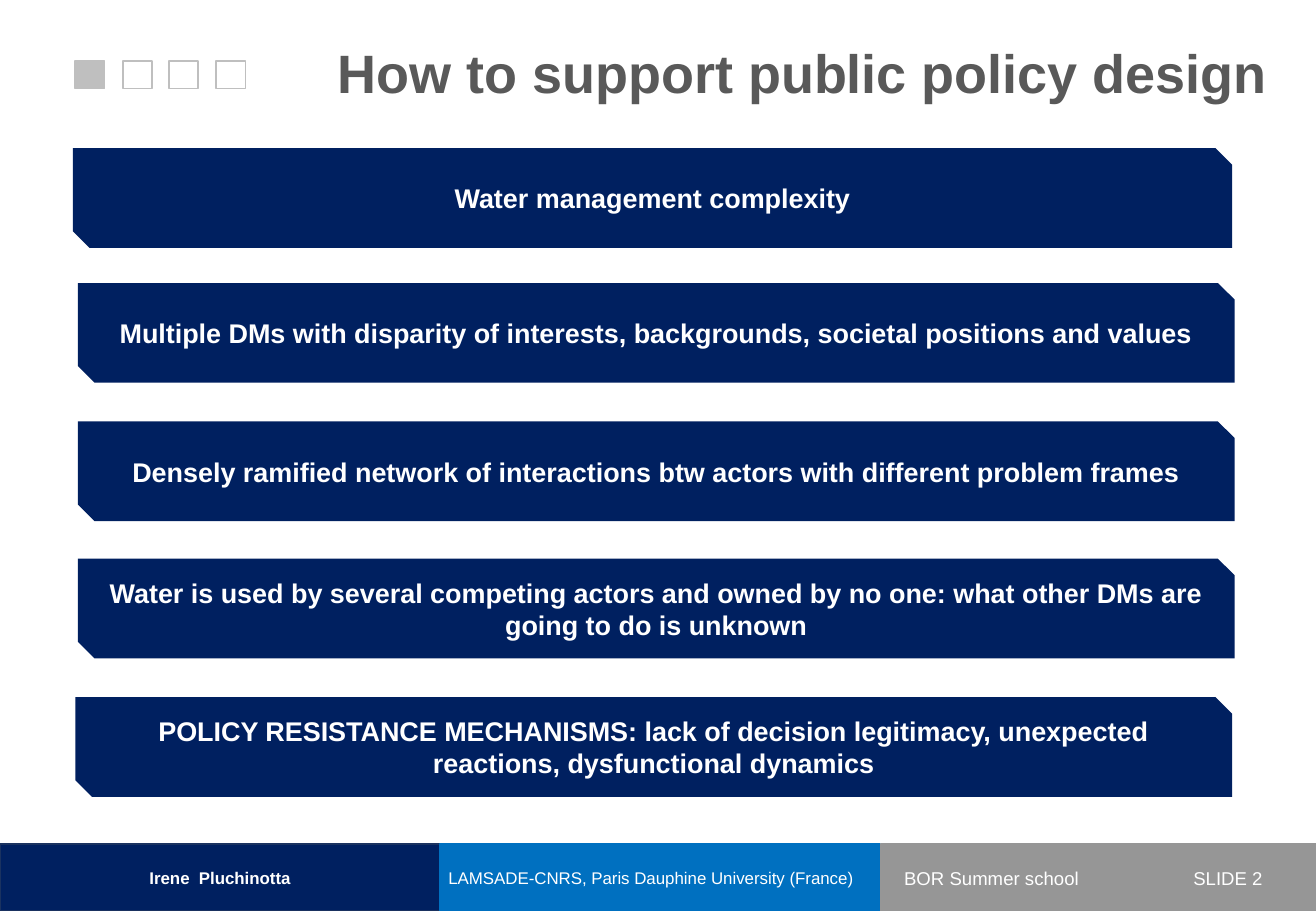
import pptx
import pptx.util
import pptx.dml.color
import pptx.enum.shapes
import pptx.enum.text

SHAPE = pptx.enum.shapes.MSO_SHAPE
ALIGN = pptx.enum.text.PP_ALIGN
MIDDLE = pptx.enum.text.MSO_ANCHOR.MIDDLE
PX = 9144  # 100 px to the inch

NAVY, BLUE, GREY = "002060", "0070C0", "969696"
SILVER, DARK, WHITE = "BFBFBF", "595959", "FFFFFF"


def rgb(color):
    return pptx.dml.color.RGBColor.from_string(color)


class Deck:
    font = "Arial"

    def __init__(self, width, height):
        self.prs = pptx.Presentation()
        self.prs.slide_width, self.prs.slide_height = width * PX, height * PX
        self.s = None

    def add_slide(self):
        self.s = self.prs.slides.add_slide(self.prs.slide_layouts[5])

    def set_text(self, sp, text, size, color=WHITE, bold=False, align=ALIGN.CENTER, inset=10):
        """Put one styled paragraph in sp, vertically centred, and return it."""
        tf = sp.text_frame
        tf.word_wrap = True
        tf.vertical_anchor = MIDDLE
        tf.margin_left = tf.margin_right = inset * PX
        p = tf.paragraphs[0]
        p.text = text
        p.alignment = align
        p.font.name, p.font.size, p.font.bold = self.font, pptx.util.Pt(size), bold
        p.font.color.rgb = rgb(color)
        return p

    def title(self, x, y, w, h, text):
        sp = self.s.shapes.title
        sp.left, sp.top, sp.width, sp.height = (v * PX for v in (x, y, w, h))
        sp.text_frame.auto_size = pptx.enum.text.MSO_AUTO_SIZE.NONE
        p = self.set_text(sp, text, 32, DARK, True, ALIGN.RIGHT)
        p.line_spacing = 0.9

    def shape(self, kind, x, y, w, h, fill=None, line=None):
        sp = self.s.shapes.add_shape(kind, x * PX, y * PX, w * PX, h * PX)
        sp.shadow.inherit = False
        if fill:
            sp.fill.solid()
            sp.fill.fore_color.rgb = rgb(fill)
        else:
            sp.fill.background()
        if line:
            sp.line.color.rgb = rgb(line)
            sp.line.width = pptx.util.Pt(1)
        else:
            sp.line.fill.background()
        return sp

    def bar(self, x, y, w, text):
        sp = self.shape(SHAPE.SNIP_2_DIAG_RECTANGLE, x, y, w, 82, NAVY)
        self.set_text(sp, text, 16, bold=True)

    def label(self, x, y, w, h, text, size, align):
        sp = self.s.shapes.add_textbox(x * PX, y * PX, w * PX, h * PX)
        self.set_text(sp, text, size, align=align)


def main():
    deck = Deck(1083, 750)
    deck.add_slide()

    footer = [
        (0, 362, NAVY, "1A3260", "Irene  Pluchinotta", 10, True, ALIGN.CENTER, 10),
        (362, 362, BLUE, BLUE, "LAMSADE-CNRS, Paris Dauphine University (France)",
         10, False, ALIGN.LEFT, 7),
        (725, 358, GREY, GREY, "BOR Summer school", 11, False, ALIGN.LEFT, 19),
    ]
    for x, w, fill, line, text, size, bold, align, inset in footer:
        sp = deck.shape(SHAPE.RECTANGLE, x, 695, w, 55, fill, line)
        deck.set_text(sp, text, size, bold=bold, align=align, inset=inset)
    deck.label(929, 695, 120, 55, "SLIDE 2", 11, ALIGN.RIGHT)

    deck.title(30, 30, 1024, 65, "How to support public policy design")
    for i in range(4):
        deck.shape(SHAPE.RECTANGLE, 62 + round(i * 38.67), 50, 24, 23,
                   None if i else SILVER, SILVER)

    bars = [
        (60, 122, 954, "Water management complexity"),
        (64, 233, 952, "Multiple DMs with disparity of interests, backgrounds, "
                       "societal positions and values"),
        (64, 347, 952, "Densely ramified network of interactions btw actors "
                       "with different problem frames"),
        (64, 460, 952, "Water is used by several competing actors and owned by no one: "
                       "what other DMs are going to do is unknown"),
        (62, 574, 952, "POLICY RESISTANCE MECHANISMS: lack of decision legitimacy, "
                       "unexpected reactions, dysfunctional dynamics"),
    ]
    for x, y, w, text in bars:
        deck.bar(x, y, w, text)

    deck.prs.save("out.pptx")


if __name__ == "__main__":
    main()
